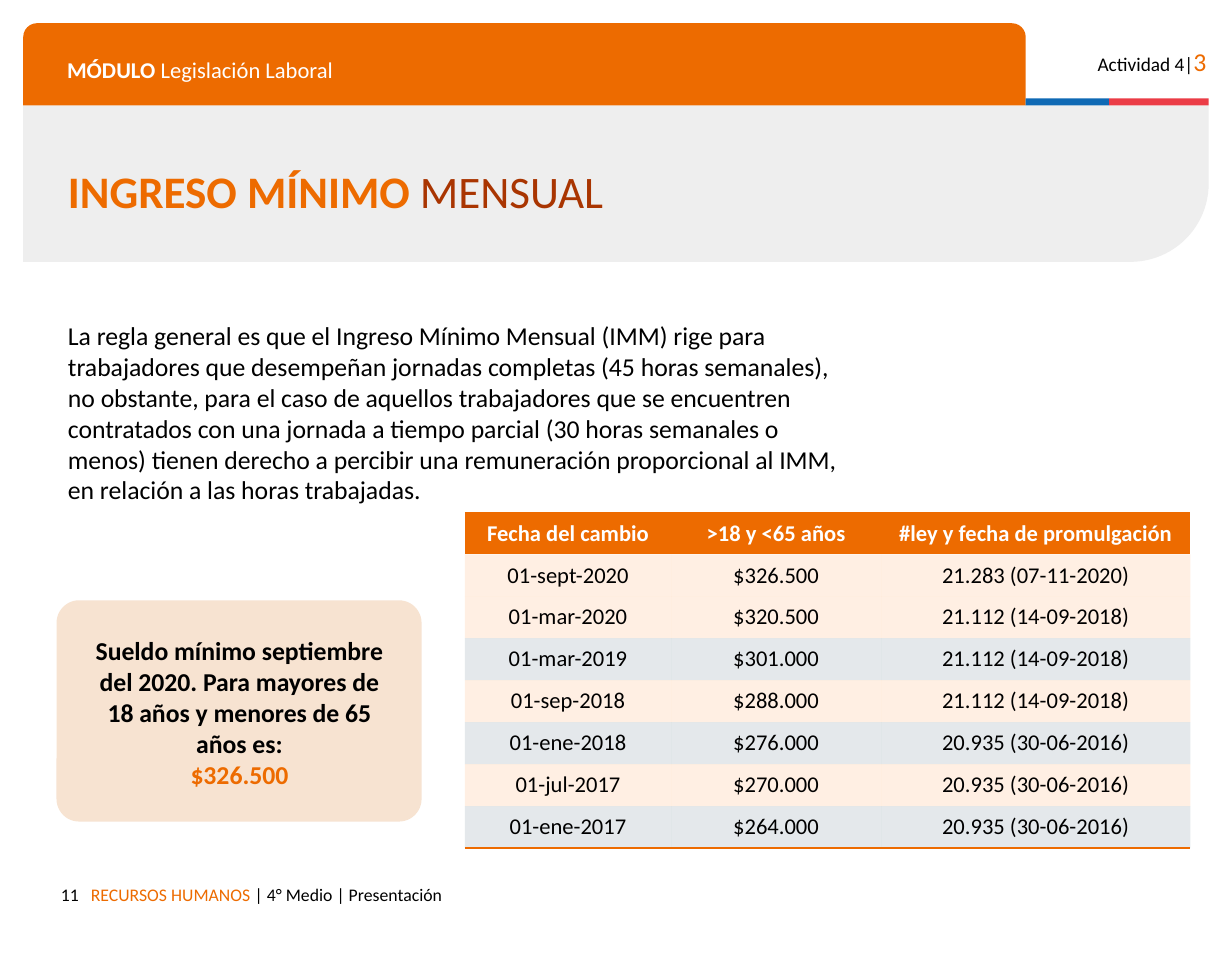
from lxml import etree
from pptx import Presentation
from pptx.dml.color import RGBColor
from pptx.enum.shapes import MSO_SHAPE
from pptx.enum.text import MSO_ANCHOR, PP_ALIGN
from pptx.oxml.ns import qn
from pptx.util import Cm, Pt

RECT = MSO_SHAPE.RECTANGLE
ROUND = MSO_SHAPE.ROUNDED_RECTANGLE
ROUND_ONE = MSO_SHAPE.ROUND_1_RECTANGLE
ROUND_TOP = MSO_SHAPE.ROUND_2_SAME_RECTANGLE
TOP, MIDDLE = MSO_ANCHOR.TOP, MSO_ANCHOR.MIDDLE
LEFT, CENTER, RIGHT = PP_ALIGN.LEFT, PP_ALIGN.CENTER, PP_ALIGN.RIGHT

FONT = "Calibri"
ORANGE = RGBColor(0xED, 0x6B, 0x00)
BROWN = RGBColor(0xA9, 0x35, 0x01)
BLUE = RGBColor(0x0F, 0x69, 0xB4)
RED = RGBColor(0xEB, 0x3C, 0x46)
GRAY = RGBColor(0xEE, 0xEE, 0xEE)
CREAM = RGBColor(0xF7, 0xE3, 0xD1)
PEACH = RGBColor(0xFF, 0xB3, 0x75)
SLATE = RGBColor(0x78, 0x90, 0x9C)
WHITE = RGBColor(0xFF, 0xFF, 0xFF)
BLACK = RGBColor(0, 0, 0)
PLAIN_STYLE = "{2D5ABB26-0587-4C30-8999-92F81FD0307C}"

RULE = (
    "La regla general es que el Ingreso Mínimo Mensual (IMM) rige para "
    "trabajadores que desempeñan jornadas completas (45 horas semanales), "
    "no obstante, para el caso de aquellos trabajadores que se encuentren "
    "contratados con una jornada a tiempo parcial (30 horas semanales o "
    "menos) tienen derecho a percibir una remuneración proporcional al IMM, "
    "en relación a las horas trabajadas."
)
WAGE = ("Sueldo mínimo septiembre del 2020. Para mayores de "
        "18 años y menores de 65 años es:")
ROWS = [
    ("Fecha del cambio", ">18 y <65 años", "#ley y fecha de promulgación"),
    ("01-sept-2020", "$326.500", "21.283 (07-11-2020)"),
    ("01-mar-2020", "$320.500", "21.112 (14-09-2018)"),
    ("01-mar-2019", "$301.000", "21.112 (14-09-2018)"),
    ("01-sep-2018", "$288.000", "21.112 (14-09-2018)"),
    ("01-ene-2018", "$276.000", "20.935 (30-06-2016)"),
    ("01-jul-2017", "$270.000", "20.935 (30-06-2016)"),
    ("01-ene-2017", "$264.000", "20.935 (30-06-2016)"),
]
COLS = (4.52, 4.6, 6.78)
ROW_HIGH = 0.92


def write(frame, paras, size=16, align=LEFT, anchor=TOP, pad=0.25, left=0.25,
          space=None):
    """Fill a text frame with paragraphs of (text, format) runs."""
    frame.word_wrap = True
    frame.vertical_anchor = anchor
    frame.margin_left, frame.margin_right = Cm(left), Cm(0.25)
    frame.margin_top = frame.margin_bottom = Cm(pad)
    for i, runs in enumerate(paras):
        para = frame.add_paragraph() if i else frame.paragraphs[0]
        para.alignment = align
        para.line_spacing = space
        for text, look in runs:
            run = para.add_run()
            run.text = text
            font = run.font
            font.name = FONT
            font.size = Pt(look.get("size", size))
            font.bold = look.get("bold", False)
            font.color.rgb = look.get("color", BLACK)


def label(slide, box, paras, **look):
    """Add a text box."""
    write(slide.shapes.add_textbox(*map(Cm, box)).text_frame, paras, **look)


def block(slide, kind, box, color, bends=()):
    """Add a filled shape without outline."""
    shape = slide.shapes.add_shape(kind, *map(Cm, box))
    shape.shadow.inherit = False
    shape.fill.solid()
    shape.fill.fore_color.rgb = color
    shape.line.fill.background()
    for i, bend in enumerate(bends):
        shape.adjustments[i] = bend
    return shape


def header(slide, x, y, wide, high):
    """Draw the module bar, the activity tag and the title panel."""
    bar, bar_high, strip = 21.97, 1.8, 0.15
    base, end, blue = y + bar_high, x + bar, 1.83
    panel = block(slide, ROUND_ONE, (x, base, wide, high - bar_high), GRAY, [0.5])
    panel.rotation = 180
    panel.element.spPr.find(qn("a:xfrm")).set("flipH", "1")
    block(slide, ROUND_TOP, (x, y, bar, bar_high), ORANGE, [0.167, 0])
    block(slide, RECT, (end, base - strip, blue, strip), BLUE)
    block(slide, RECT, (end + blue, base - strip, wide - bar - blue, strip), RED)
    label(slide, (end + 0.96, y + 0.25, 3.25, 0.97),
          [[("Actividad 4|", {}), ("3", {"size": 16, "color": ORANGE})]],
          size=12, align=RIGHT)
    label(slide, (x + 0.71, y + 0.46, 20.68, 0.89),
          [[("MÓDULO ", {"bold": True, "color": WHITE}),
            ("Legislación Laboral", {"color": WHITE})]], size=14)
    label(slide, (x + 0.73, base + 0.66, 13.84, 2.64),
          [[("INGRESO MÍNIMO ", {"bold": True, "color": ORANGE}),
            ("MENSUAL", {"color": BROWN})]],
          size=28, anchor=MIDDLE, space=0.8)


def card(slide, x, y, wide, high):
    """Draw the rounded card with the current wage."""
    block(slide, ROUND, (x, y, wide, high), CREAM, [0.102])
    label(slide, (x + 0.38, y + 0.63, wide - 0.74, high - 1.17),
          [[(WAGE, {"bold": True})],
           [("$326.500", {"bold": True, "color": ORANGE})]],
          align=CENTER, pad=0.13)


def edge(cell, side):
    """Put an orange line on one side of a cell."""
    line = etree.Element(qn("a:" + side), w=str(Pt(1)))
    fill = etree.SubElement(line, qn("a:solidFill"))
    etree.SubElement(fill, qn("a:srgbClr"), val=str(ORANGE))
    cell._tc.get_or_add_tcPr().insert(0, line)


def paint(cell, color, alpha=None):
    """Fill a cell, with an opacity in percent if given."""
    cell.fill.solid()
    cell.fill.fore_color.rgb = color
    if alpha:
        tone = next(cell._tc.tcPr.iter(qn("a:srgbClr")))
        etree.SubElement(tone, qn("a:alpha"), val=str(alpha * 1000))


def wages(slide, x, y):
    """Build the table of wage changes."""
    box = (x, y, sum(COLS), ROW_HIGH * len(ROWS))
    table = slide.shapes.add_table(len(ROWS), len(COLS), *map(Cm, box)).table
    table._tbl.tblPr.find(qn("a:tableStyleId")).text = PLAIN_STYLE
    table.horz_banding = False
    for col, wide in zip(table.columns, COLS):
        col.width = Cm(wide)
    for r, row in enumerate(ROWS):
        table.rows[r].height = Cm(ROW_HIGH)
        head = r == 0
        for c, text in enumerate(row):
            cell = table.cell(r, c)
            look = {"bold": head, "color": WHITE if head else BLACK}
            write(cell.text_frame, [[(text, look)]], size=14, align=CENTER)
            cell.vertical_anchor = MIDDLE
            cell.margin_left = cell.margin_right = Cm(0.25)
            cell.margin_top = cell.margin_bottom = Cm(0.1)
            if head:
                paint(cell, ORANGE)
                edge(cell, "lnT")
            else:
                paint(cell, SLATE if r > 2 and r % 2 else PEACH, 20)
            if r == len(ROWS) - 1:
                edge(cell, "lnB")


def footer(slide, x, y):
    """Write the page number and the course line."""
    label(slide, (x + 0.53, y, 18.85, 0.97),
          [[("RECURSOS HUMANOS ", {"color": ORANGE}),
            ("| 4° Medio | Presentación", {})]], size=11, left=0.95)
    label(slide, (x, y, 1.47, 0.74), [[("11", {})]], size=11, align=RIGHT)


def main():
    """Build and save the slide."""
    deck = Presentation()
    deck.slide_width, deck.slide_height = Cm(27), Cm(21)
    slide = deck.slides.add_slide(deck.slide_layouts[6])
    header(slide, 0.51, 0.51, 25.98, 5.23)
    footer(slide, 0.51, 19.13)
    label(slide, (1.24, 6.88, 17.75, 4.37), [[(RULE, {})]], pad=0.13)
    wages(slide, 10.19, 11.23)
    card(slide, 1.24, 13.16, 8, 4.85)
    deck.save("out.pptx")


if __name__ == "__main__":
    main()
